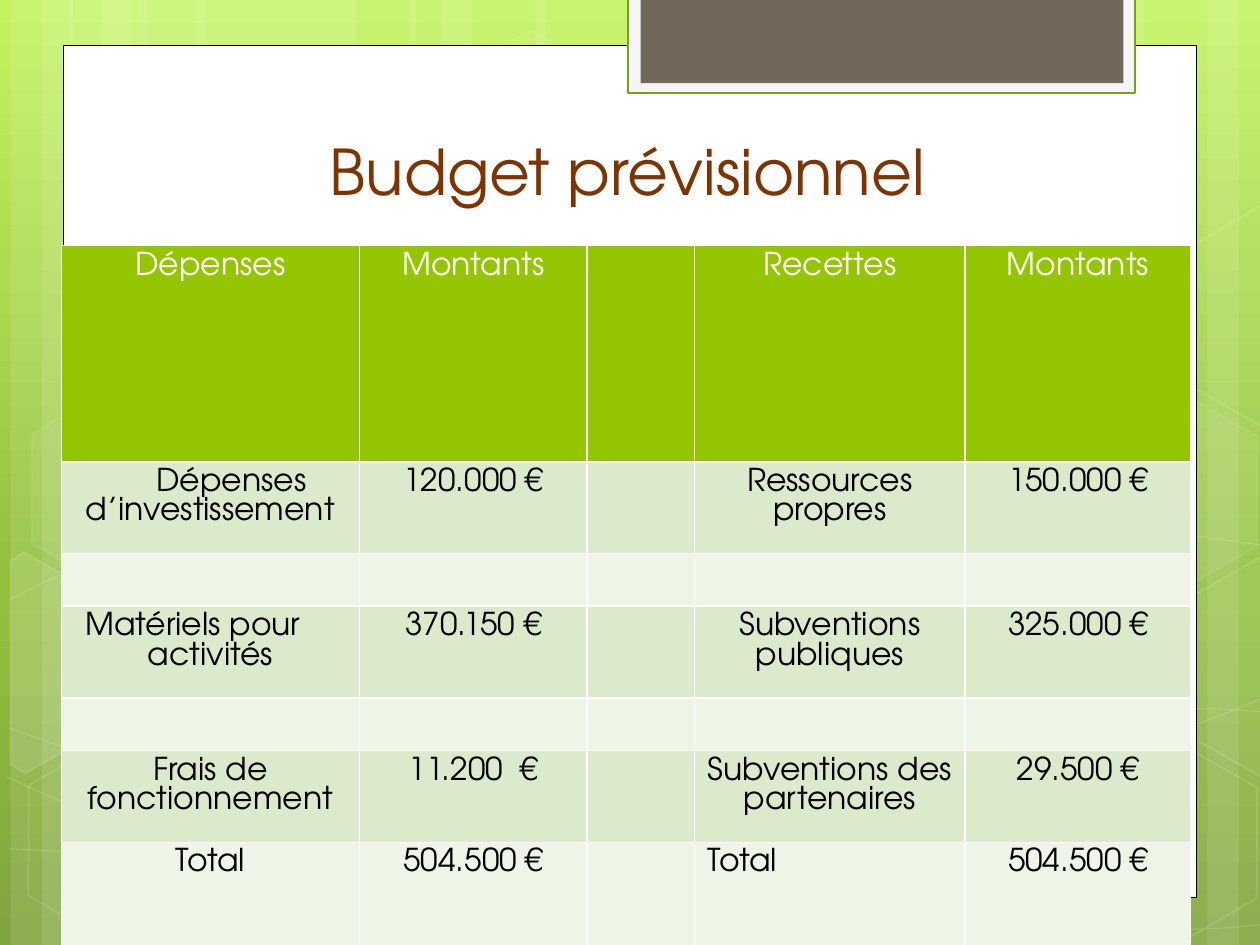
import copy
import pptx
import pptx.dml.color
import pptx.enum.shapes
import pptx.enum.text
import pptx.oxml
import pptx.oxml.ns
import pptx.util
from pptx.util import Pt

FONT = "TeX Gyre Adventor"
WHITE = "FFFFFF"
SHAPES = pptx.enum.shapes.MSO_SHAPE
ALIGN = pptx.enum.text.PP_ALIGN

STRIPES = [(78, 126), (6, 36), (24, 60), (112, 126), (40, 36), (58, 60),
           (528, 126), (690, 36), (648, 60), (306, 222), (234, 36), (252, 60)]
CURVES = [
    [(5, 485), (44, 487), (83, 489), (137, 488), (191, 487), (258, 486), (330, 479),
     (402, 472), (504, 458), (570, 444), (636, 431), (703, 409), (725, 397)],
    [(5, 343), (26, 332), (47, 321), (87, 310), (128, 300), (186, 284), (250, 279),
     (314, 274), (392, 273), (471, 279), (550, 284), (682, 307), (725, 312)],
    [(4, 444), (91, 484), (178, 523), (240, 539)],
    [(5, 416), (27, 424), (50, 432), (92, 444), (134, 454), (197, 472), (257, 485),
     (317, 497), (392, 510), (452, 517), (512, 525), (576, 528), (614, 530),
     (652, 533), (662, 531), (680, 531), (699, 531), (712, 529), (725, 528)],
    [(174, 539), (187, 525), (200, 510), (217, 498), (235, 485), (259, 470), (279, 460),
     (300, 450), (312, 446), (338, 438), (364, 431), (413, 421), (438, 416),
     (464, 411), (467, 411), (490, 410), (512, 408), (547, 405), (572, 405),
     (597, 404), (638, 405), (638, 405), (654, 405), (670, 405), (686, 405),
     (699, 405), (712, 406), (724, 407)],
]
HEXAGONS = [(240.5, 26, 4, 8), (358, 424, 6, 12), (8, 425.5, 0, 12), (10, 224.5, 7, 8),
            (125.5, 426, 0, 12), (542, 326, 10, 12), (600.5, 427, 0, 12), (600.5, 226, 7, 8)]
RIGHT_PIECE = [(666.5, 149), (720.5, 117.5), (727, 121), (726.5, 241), (721.5, 244), (666.5, 212.5)]
PIECES = [
    ([(6, 320.5), (13.5, 315.5), (69, 347), (68.5, 410.5), (14.5, 442), (6, 437)], 10),
    ([(x, y + 200.5) for x, y in RIGHT_PIECE], 4),
    (RIGHT_PIECE, 0),
]
COLUMNS = [170.5, 130, 61.5, 154.5, 129]
ROWS = [123.5, 52.5, 30, 52.5, 30, 52.5, 60]
BUDGET = [
    ["Dépenses", "Montants", "", "Recettes", "Montants"],
    ["Dépenses d’investissement", "120.000 €", "", "Ressources propres", "150.000 €"],
    [""] * 5,
    ["Matériels pour activités", "370.150 €", "", "Subventions publiques", "325.000 €"],
    [""] * 5,
    ["Frais de fonctionnement", "11.200  €", "", "Subventions des partenaires", "29.500 €"],
    ["Total", "504.500 €", "", "Total", "504.500 €"],
]
INDENTS = {(1, 0): {"indent": 24}, (3, 0): {"marL": 20, "marR": 20, "indent": -20}}


def rgb(value):
    """Turn a hex string into a colour."""
    return pptx.dml.color.RGBColor.from_string(value)


def paint(fill, value, opacity=100):
    """Give a fill one colour, with opacity in percent; zero means no fill."""
    if not opacity:
        fill.background()
        return
    fill.solid()
    fill.fore_color.rgb = rgb(value)
    if opacity < 100:
        alpha = pptx.oxml.parse_xml(
            f'<a:alpha {pptx.oxml.ns.nsdecls("a")} val="{opacity * 1000}"/>')
        fill.fore_color._color._xClr.append(alpha)


def style(shape, colour, opacity=100, line=None, width=0, line_opacity=100):
    """Set the fill and outline of a shape and drop its shadow."""
    shape.shadow.inherit = False
    paint(shape.fill, colour, opacity)
    paint(shape.line.fill, line, line_opacity if line else 0)
    if line:
        shape.line.width = Pt(width)


def add_preset(page, kind, box):
    """Add a preset shape in a box given in points."""
    return page.shapes.add_shape(kind, *map(Pt, box))


def add_outline(page, box, points, close):
    """Add a freeform through points measured from the corner of the box."""
    corners = [(Pt(box[0] + x), Pt(box[1] + y)) for x, y in points]
    builder = page.shapes.build_freeform(*corners[0])
    builder.add_line_segments(corners[1:], close=close)
    return builder.convert_to_shape()


def add_curve(page, box, knots):
    """Add an open freeform whose segments are cubic curves."""
    shape = add_outline(page, box, knots, False)
    segments = shape._element.xpath(".//a:lnTo")
    for start in range(0, len(segments), 3):
        curve = pptx.oxml.parse_xml(f'<a:cubicBezTo {pptx.oxml.ns.nsdecls("a")}/>')
        segments[start].addprevious(curve)
        for segment in segments[start:start + 3]:
            curve.append(segment[0])
            segment.getparent().remove(segment)
    return shape


def draw_gradient(page):
    """Fill the background with a green gradient from top to bottom."""
    fill = page.background.fill
    fill.gradient()
    fill.gradient_angle = 270
    first = fill.gradient_stops[0]._gs
    first.addnext(copy.deepcopy(first))
    for stop, (position, colour) in zip(
            fill.gradient_stops, [(0, "C3F35F"), (0.62, "93BF3F"), (1, "81A53E")]):
        stop.position = position
        stop.color.rgb = rgb(colour)


def draw_backdrop(page, box):
    """Draw the pale stripes, curves and hexagons."""
    left, top, width, height = box
    for offset, stripe_width in STRIPES:
        stripe = add_preset(page, SHAPES.RECTANGLE, (left + offset, top, stripe_width, height))
        style(stripe, WHITE, 10)
    for knots in CURVES:
        style(add_curve(page, box, knots), WHITE, 0, WHITE, 0.5, 20)
    for x, y, opacity, line_opacity in HEXAGONS:
        hexagon = add_preset(page, SHAPES.HEXAGON, (left + x, top + y, 126, 109.5))
        hexagon.adjustments[0] = 0.285
        hexagon.rotation = 30
        style(hexagon, WHITE, opacity, WHITE, 1, line_opacity)
    for points, opacity in PIECES:
        style(add_outline(page, box, points, True), WHITE, opacity, WHITE, 1, 12)


def draw_panel(page, box):
    """Draw the white panel with the framed tab at its top."""
    left, top, width, height = box
    style(add_preset(page, SHAPES.RECTANGLE, box), WHITE, line="000000", width=0.5)
    tab = add_preset(page, SHAPES.RECTANGLE, (left + 323, top - 27.5, 289.5, 54.5))
    style(tab, "F5F5F5", line="74A510", width=1.25)
    style(add_preset(page, SHAPES.RECTANGLE, (left + 330, top - 27.5, 276, 49)), "71685A")


def write(para, text, size, colour, align=ALIGN.CENTER):
    """Fill one paragraph with text in the slide font."""
    para.text = text
    para.alignment = align
    para.font.name = FONT
    para.font.size = Pt(size)
    para.font.color.rgb = rgb(colour)


def draw_title(page, box):
    """Write the title at the bottom of its box."""
    frame = page.shapes.add_textbox(*map(Pt, box)).text_frame
    frame.word_wrap = True
    frame.vertical_anchor = pptx.enum.text.MSO_ANCHOR.BOTTOM
    frame.margin_top = 0
    frame.margin_bottom = Pt(2.3)
    write(frame.paragraphs[0], "Budget prévisionnel", 36, "7F3400")


def draw_borders(cell):
    """Give a cell thin white borders."""
    properties = cell._tc.get_or_add_tcPr()
    for index, side in enumerate("LRTB"):
        properties.insert(index, pptx.oxml.parse_xml(
            f'<a:ln{side} {pptx.oxml.ns.nsdecls("a")} w="{Pt(1)}"><a:solidFill>'
            f'<a:srgbClr val="{WHITE}"/></a:solidFill></a:ln{side}>'))


def draw_budget(page, box):
    """Build the table of expenses and income."""
    table = page.shapes.add_table(len(ROWS), len(COLUMNS), *map(Pt, box)).table
    table.first_row = table.horz_banding = False
    for column, width in zip(table.columns, COLUMNS):
        column.width = Pt(width)
    for r, (row, height) in enumerate(zip(table.rows, ROWS)):
        row.height = Pt(height)
        fill = "94C600" if r == 0 else ("DCEACC" if r % 2 else "EEF5E7")
        for c, cell in enumerate(row.cells):
            paint(cell.fill, fill)
            draw_borders(cell)
            para = cell.text_frame.paragraphs[0]
            last_label = (r, c) == (len(ROWS) - 1, 3)
            write(para, BUDGET[r][c], 18, "000000" if r else WHITE,
                  ALIGN.LEFT if last_label else ALIGN.CENTER)
            for name, length in INDENTS.get((r, c), {}).items():
                para._p.get_or_add_pPr().set(name, str(Pt(length)))


def main():
    """Build the slide and save the deck."""
    deck = pptx.Presentation()
    deck.slide_width, deck.slide_height = Pt(720), Pt(540)
    page = deck.slides.add_slide(deck.slide_layouts[6])
    draw_gradient(page)
    draw_backdrop(page, (0, 0, 720, 540))
    draw_panel(page, (36, 26, 648, 487))
    draw_title(page, (82, 80.5, 553, 41))
    draw_budget(page, (35, 140.4, sum(COLUMNS), sum(ROWS)))
    deck.save("out.pptx")


if __name__ == "__main__":
    main()
